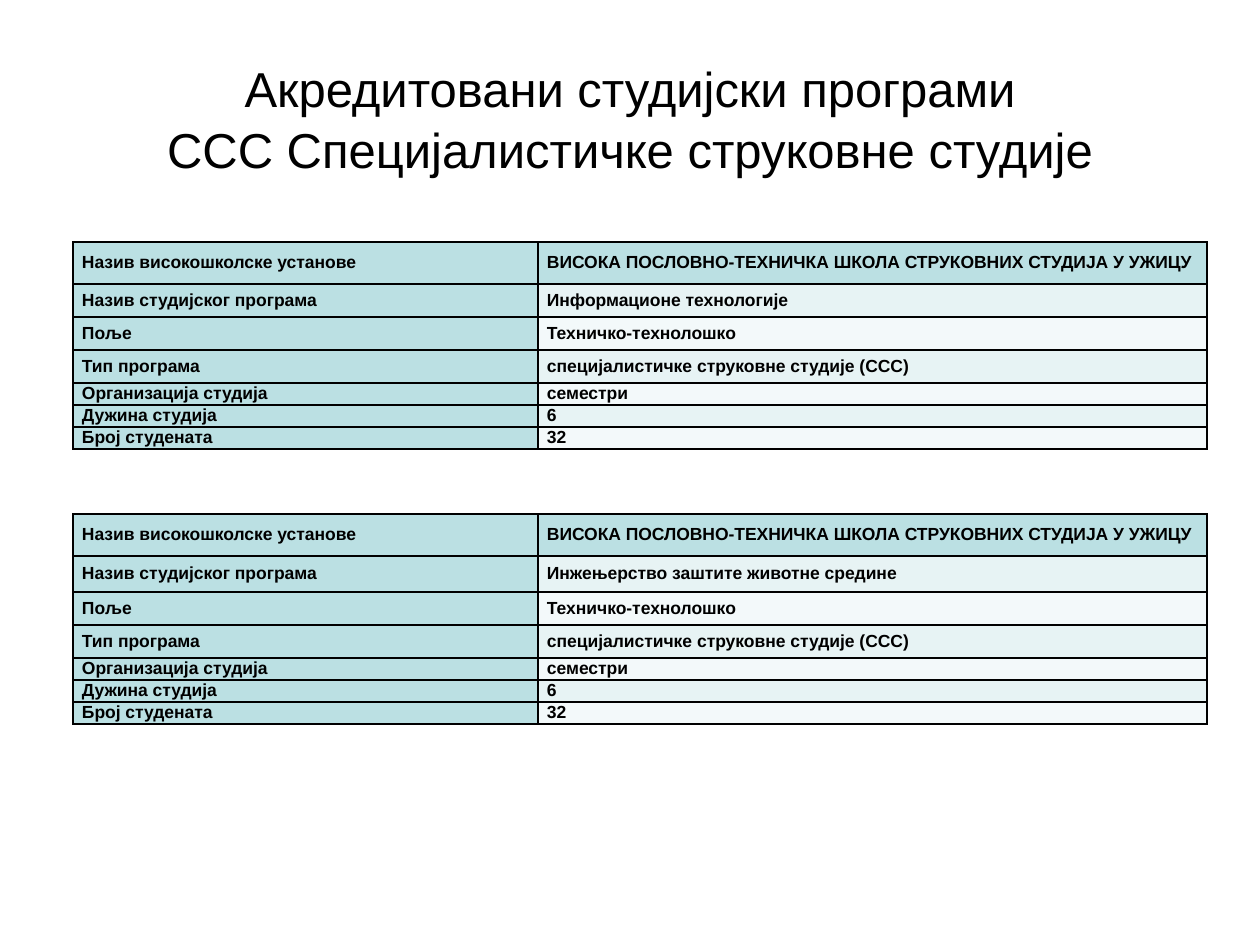
from lxml.etree import SubElement
from pptx import Presentation
from pptx.dml.color import RGBColor
from pptx.enum.text import MSO_ANCHOR, PP_ALIGN
from pptx.oxml.ns import qn
from pptx.util import Pt

PX = 914400 // 126
BLACK = RGBColor(0x00, 0x00, 0x00)
TEAL = RGBColor(0xBB, 0xE0, 0xE3)
BANDS = (RGBColor(0xF3, 0xF9, 0xFA), RGBColor(0xE7, 0xF3, 0xF4))

LABELS = (
    "Назив високошколске установе",
    "Назив студијског програма",
    "Поље",
    "Тип програма",
    "Организација студија",
    "Дужина студија",
    "Број студената",
)
SCHOOL = "ВИСОКА ПОСЛОВНО-ТЕХНИЧКА ШКОЛА СТРУКОВНИХ СТУДИЈА У УЖИЦУ"
DETAILS = (
    "Техничко-технолошко",
    "специјалистичке струковне студије (ССС)",
    "семестри",
    "6",
    "32",
)
PROGRAMS = (
    ("Информационе технологије", 242, 33),
    ("Инжењерство заштите животне средине", 514, 36),
)
COLUMNS = (465, 669)


def write(tf, text, size, font="Arial", color=BLACK, bold=False,
          align=PP_ALIGN.LEFT, spacing=1.0):
    p = tf.paragraphs[0]
    p.text = text
    p.alignment = align
    p.line_spacing = spacing
    for r in p.runs:
        r.font.name = font
        r.font.size = Pt(size)
        r.font.bold = bold
        r.font.color.rgb = color


class SlideBuilder:
    def __init__(self, slide):
        self.slide = slide
        self.title_size = 28
        self.cell_size = 10
        self.border = Pt(1)

    def title(self, text, x, y, w, h):
        sp = self.slide.shapes.add_textbox(x * PX, y * PX, w * PX, h * PX)
        tf = sp.text_frame
        tf.word_wrap = True
        tf.vertical_anchor = MSO_ANCHOR.MIDDLE
        write(tf, text, self.title_size, align=PP_ALIGN.CENTER, spacing=1.05)

    def table(self, rows, x, y, widths, heights):
        frame = self.slide.shapes.add_table(
            len(rows), len(widths), x * PX, y * PX,
            sum(widths) * PX, sum(heights) * PX)
        table = frame.table
        for column, width in zip(table.columns, widths):
            column.width = width * PX
        for i, (values, height) in enumerate(zip(rows, heights)):
            table.rows[i].height = height * PX
            for j, text in enumerate(values):
                fill = TEAL if i == 0 or j == 0 else BANDS[i % 2]
                self.cell(table.cell(i, j), text, fill)

    def cell(self, cell, text, fill):
        cell.margin_left = cell.margin_right = 9 * PX
        cell.margin_top = cell.margin_bottom = 0
        cell.vertical_anchor = MSO_ANCHOR.MIDDLE
        write(cell.text_frame, text, self.cell_size, bold=True)
        tcPr = cell._tc.get_or_add_tcPr()
        for side in ("a:lnL", "a:lnR", "a:lnT", "a:lnB"):
            ln = SubElement(tcPr, qn(side), w=str(self.border))
            solid = SubElement(ln, qn("a:solidFill"))
            SubElement(solid, qn("a:srgbClr"), val=str(BLACK))
        cell.fill.solid()
        cell.fill.fore_color.rgb = fill


def main():
    prs = Presentation()
    prs.slide_width = 1260 * PX
    prs.slide_height = 945 * PX
    s = SlideBuilder(prs.slides.add_slide(prs.slide_layouts[6]))
    s.title("Акредитовани студијски програми\v"
            "ССС Специјалистичке струковне студије", 63, 38, 1134, 158)
    for program, top, program_height in PROGRAMS:
        rows = list(zip(LABELS, (SCHOOL, program, *DETAILS)))
        heights = (42, program_height, 33, 33, 22, 22, 22)
        s.table(rows, 73, top, COLUMNS, heights)
    prs.save("out.pptx")


if __name__ == "__main__":
    main()
